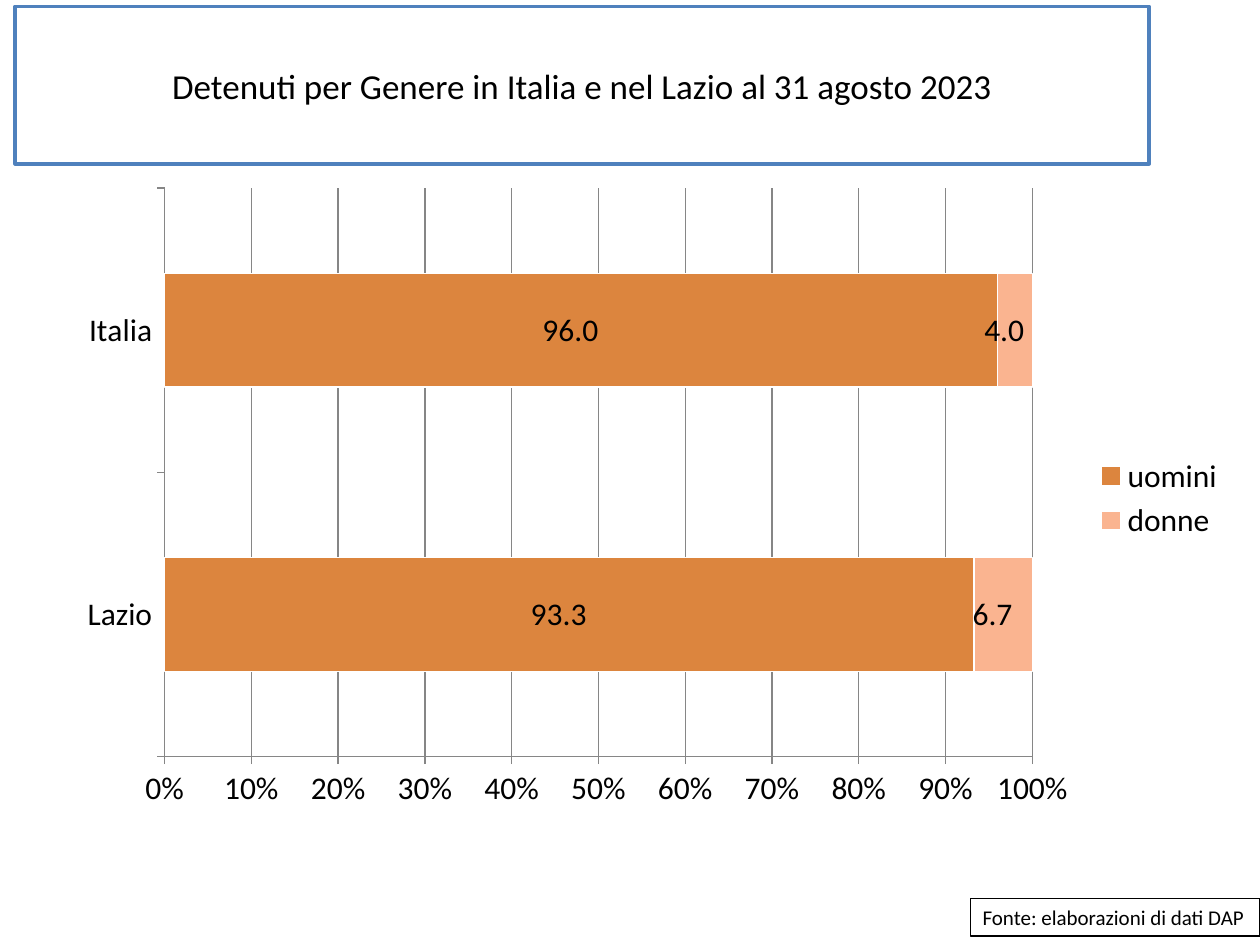
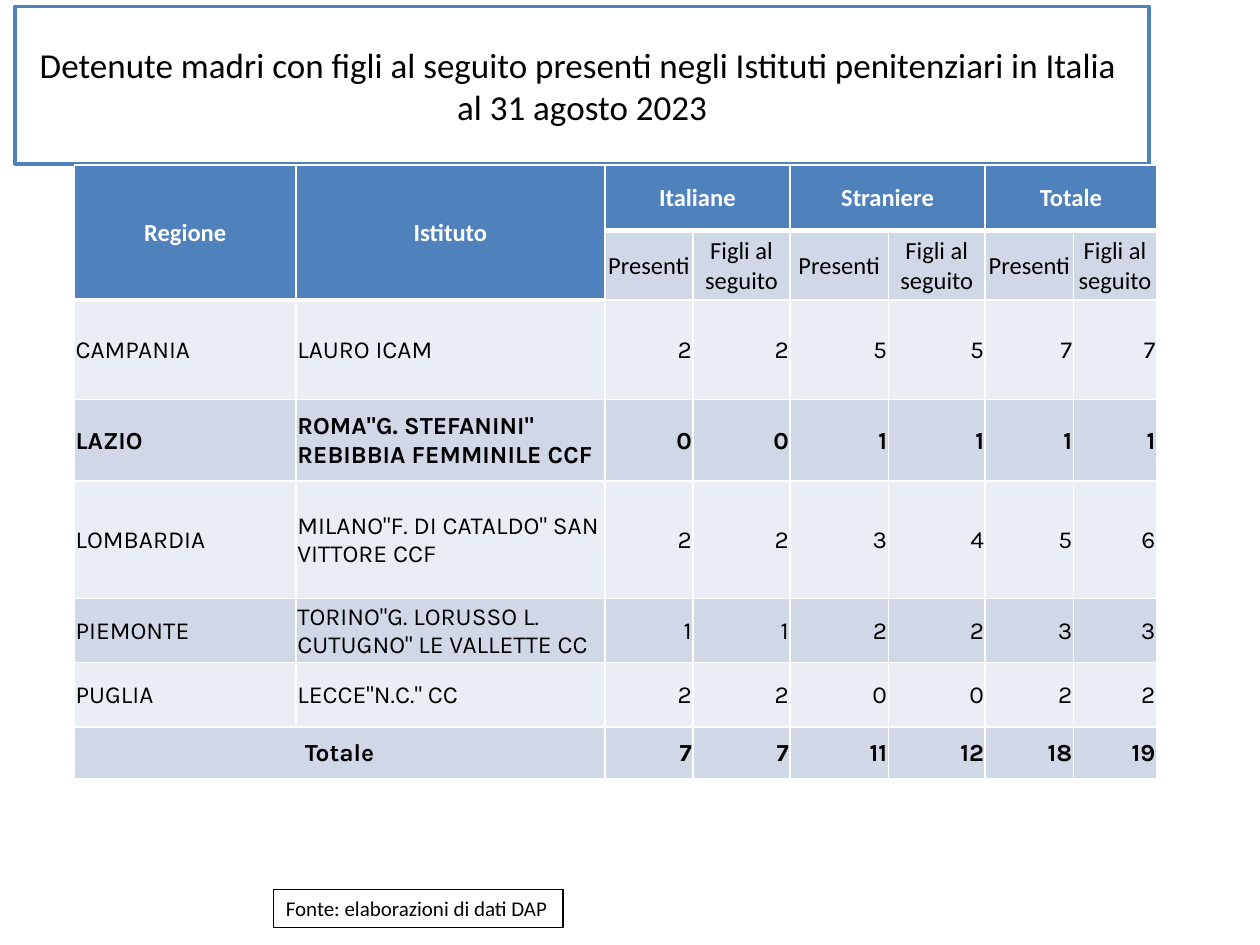
from lxml import etree
from pptx import Presentation
from pptx.chart.data import CategoryChartData
from pptx.dml.color import RGBColor
from pptx.enum.chart import XL_CHART_TYPE, XL_LABEL_POSITION, XL_LEGEND_POSITION, XL_TICK_MARK
from pptx.enum.shapes import MSO_SHAPE
from pptx.enum.text import MSO_ANCHOR, MSO_AUTO_SIZE, PP_ALIGN
from pptx.oxml import parse_xml
from pptx.oxml.ns import nsdecls, qn
from pptx.util import Inches, Pt

LEFT, CENTER, RIGHT = PP_ALIGN.LEFT, PP_ALIGN.CENTER, PP_ALIGN.RIGHT
MIDDLE = MSO_ANCHOR.MIDDLE
OUTSIDE = XL_TICK_MARK.OUTSIDE

# Content
SOURCE = "Fonte: elaborazioni di dati DAP"
GENDER_TITLE = "Detenuti per Genere in Italia e nel Lazio al 31 agosto 2023"
MOTHERS_TITLE = ("Detenute madri con figli al seguito presenti negli Istituti "
                 "penitenziari in Italia \val 31 agosto 2023")
AREAS = ["Lazio", "Italia"]
GENDERS = [("uomini ", [93.3, 96.0], "men"), ("donne", [6.7, 4.0], "women")]
KEYS = ["Regione", "Istituto"]
GROUPS = ["Italiane", "Straniere", "Totale"]
MEASURES = ["Presenti", "Figli al seguito"]
PRISONS = [
    ("CAMPANIA", "LAURO ICAM", 2, 2, 5, 5, 7, 7),
    ("LAZIO", 'ROMA"G. STEFANINI" REBIBBIA FEMMINILE CCF', 0, 0, 1, 1, 1, 1),
    ("LOMBARDIA", 'MILANO"F. DI CATALDO" SAN VITTORE CCF', 2, 2, 3, 4, 5, 6),
    ("PIEMONTE", 'TORINO"G. LORUSSO L. CUTUGNO" LE VALLETTE CC', 1, 1, 2, 2, 3, 3),
    ("PUGLIA", 'LECCE"N.C." CC', 2, 2, 0, 0, 2, 2),
    ("Totale", "", 7, 7, 11, 12, 18, 19),
]
BOLD_ROWS = {"LAZIO", "Totale"}

# Theme and layout
THEME = {
    "color": {"accent": "4F81BD", "text": "000000", "paper": "FFFFFF", "grid": "868686",
              "men": "DC853E", "women": "FAB490", "band": "D0D8E8", "light": "E9EDF4"},
    "size": {"title": 20, "chart": 18, "table": 14, "source": 12},
    "font": {"main": "Calibri", "data": "Karla"},
}
TITLE_BOX = (0.12, 0.05, 9, 1.25)
SOURCE_SIZE = (2.3, 0.3)
CHART_BOX = (0.51, 1.39, 9.37, 5.13)
PLOT_AREA = {"x": 0.085, "y": 0.02, "w": 0.735, "h": 0.88}
TABLE_AT = (0.59, 1.31)
COL_WIDTHS = [1.76, 2.45, 0.7, 0.77, 0.78, 0.77, 0.7, 0.66]
ROW_HEIGHTS = [0.52, 0.55, 0.79, 0.65, 0.93, 0.51, 0.51, 0.41]
VALUE_FORMAT = r"_-* #,##0.0\ _€_-;\-* #,##0.0\ _€_-"


def color(name):
    return RGBColor.from_string(THEME["color"][name])


def style_font(font, size, ink="text", face="main", bold=False):
    font.name = THEME["font"][face]
    font.size = Pt(THEME["size"][size])
    font.color.rgb = color(ink)
    font.bold = bold


def write(tf, text, align=LEFT, **style):
    p = tf.paragraphs[0]
    p.text = text
    p.alignment = align
    for r in p.runs:
        style_font(r.font, **style)


def frame(sp, line, width):
    sp.fill.solid()
    sp.fill.fore_color.rgb = color("paper")
    sp.line.color.rgb = color(line)
    sp.line.width = Pt(width)


def add_slide(prs, title, source_at):
    """Add a slide with its framed title and source box."""
    s = prs.slides.add_slide(prs.slide_layouts[5])
    sp = s.shapes.title
    sp.left, sp.top, sp.width, sp.height = map(Inches, TITLE_BOX)
    frame(sp, "accent", 2)
    sp.text_frame.auto_size = MSO_AUTO_SIZE.NONE
    sp.text_frame.vertical_anchor = MIDDLE
    write(sp.text_frame, title, CENTER, size="title")

    sp = s.shapes.add_shape(MSO_SHAPE.RECTANGLE, *map(Inches, source_at + SOURCE_SIZE))
    sp.shadow.inherit = False
    frame(sp, "text", 0.75)
    tf = sp.text_frame
    tf.word_wrap = False
    tf.auto_size = MSO_AUTO_SIZE.SHAPE_TO_FIT_TEXT
    tf.vertical_anchor = MSO_ANCHOR.TOP
    write(tf, SOURCE, size="source")
    return s


def place_plot(chart):
    """Fix the inner plot area as fractions of the chart."""
    plot_area = chart.plots[0]._element.getparent()
    for old in plot_area.findall(qn("c:layout")):
        plot_area.remove(old)
    layout = etree.Element(qn("c:layout"))
    manual = etree.SubElement(layout, qn("c:manualLayout"))
    settings = {"layoutTarget": "inner", "xMode": "edge", "yMode": "edge", **PLOT_AREA}
    for tag, val in settings.items():
        etree.SubElement(manual, qn(f"c:{tag}")).set("val", str(val))
    plot_area.insert(0, layout)


def add_gender_chart(s):
    data = CategoryChartData(number_format="0.0")
    data.categories = AREAS
    for name, values, _ in GENDERS:
        data.add_series(name, values)
    chart = s.shapes.add_chart(XL_CHART_TYPE.BAR_STACKED_100, *map(Inches, CHART_BOX), data).chart
    style_font(chart.font, "chart")
    chart.has_title = False
    chart.has_legend = True
    chart.legend.position = XL_LEGEND_POSITION.RIGHT
    chart.legend.include_in_layout = False
    place_plot(chart)

    plot = chart.plots[0]
    plot.gap_width, plot.overlap = 150, 100
    plot.vary_by_categories = False
    for series, (_, _, fill) in zip(plot.series, GENDERS):
        series.format.fill.solid()
        series.format.fill.fore_color.rgb = color(fill)
        series.format.line.color.rgb = color("paper")
        series.format.line.width = Pt(0.75)
        labels = series.data_labels
        labels.show_value = True
        labels.position = XL_LABEL_POSITION.CENTER
        labels.number_format = VALUE_FORMAT
        labels.number_format_is_linked = False
        style_font(labels.font, "chart")

    value_axis = chart.value_axis
    value_axis.minimum_scale, value_axis.maximum_scale, value_axis.major_unit = 0, 1, 0.1
    value_axis.has_major_gridlines = True
    value_axis.tick_labels.number_format = "0%"
    value_axis.tick_labels.number_format_is_linked = False
    for axis in (value_axis, chart.category_axis):
        axis.major_tick_mark = OUTSIDE
        axis.format.line.color.rgb = color("grid")
    value_axis.major_gridlines.format.line.color.rgb = color("grid")


def set_borders(cell, bottom):
    widths = {"L": 1, "R": 1, "T": 1, "B": bottom}
    tc_pr = cell._tc.get_or_add_tcPr()
    for i, (side, width) in enumerate(widths.items()):
        tc_pr.insert(i, parse_xml(
            f'<a:ln{side} {nsdecls("a")} w="{Pt(width)}"><a:solidFill>'
            f'<a:srgbClr val="{THEME["color"]["paper"]}"/></a:solidFill></a:ln{side}>'))


def format_cell(cell, text, fill, align, bottom=1, **style):
    cell.margin_left = cell.margin_right = cell.margin_top = Inches(0.01)
    cell.margin_bottom = 0
    cell.vertical_anchor = MIDDLE
    cell.fill.solid()
    cell.fill.fore_color.rgb = color(fill)
    set_borders(cell, bottom)
    if text:
        write(cell.text_frame, text, align, size="table", **style)


def add_mothers_table(s):
    box = TABLE_AT + (sum(COL_WIDTHS), sum(ROW_HEIGHTS))
    table = s.shapes.add_table(len(ROW_HEIGHTS), len(COL_WIDTHS), *map(Inches, box)).table
    table.first_row = table.horz_banding = False
    for col, width in zip(table.columns, COL_WIDTHS):
        col.width = Inches(width)
    for row, height in zip(table.rows, ROW_HEIGHTS):
        row.height = Inches(height)

    # Two header rows: group names above their measures
    head = dict(fill="accent", align=CENTER, bottom=3, ink="paper", bold=True)
    top = KEYS + [text for group in GROUPS for text in (group, "")]
    for c, text in enumerate(top):
        format_cell(table.cell(0, c), text, **head)
        if c < len(KEYS):
            format_cell(table.cell(1, c), "", **head)
            table.cell(0, c).merge(table.cell(1, c))
        else:
            format_cell(table.cell(1, c), MEASURES[c % 2], "band", CENTER)
            if c % 2 == 0:
                table.cell(0, c).merge(table.cell(0, c + 1))

    # One row per prison, then the total
    for r, record in enumerate(PRISONS, start=2):
        for c, value in enumerate(record):
            align = RIGHT if c >= len(KEYS) else CENTER if record[0] == "Totale" else LEFT
            format_cell(table.cell(r, c), str(value), "band" if r % 2 else "light", align,
                        face="data", bold=record[0] in BOLD_ROWS)
    last = len(ROW_HEIGHTS) - 1
    table.cell(last, 0).merge(table.cell(last, 1))


def main():
    prs = Presentation()
    prs.slide_width, prs.slide_height = Inches(10), Inches(7.5)
    add_gender_chart(add_slide(prs, GENDER_TITLE, (7.7, 7.13)))
    add_mothers_table(add_slide(prs, MOTHERS_TITLE, (2.17, 7.06)))
    prs.save("out.pptx")


if __name__ == "__main__":
    main()
